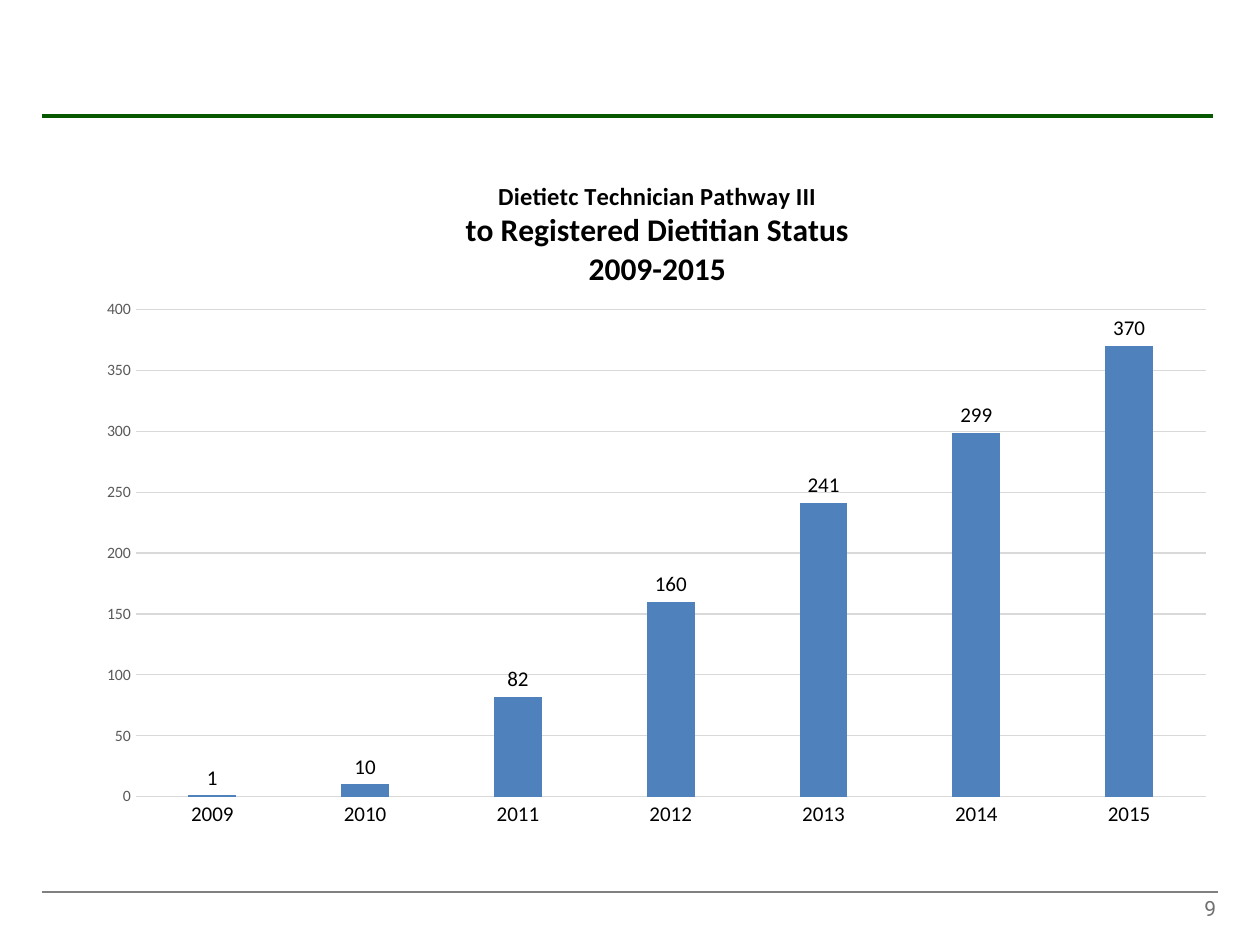
from lxml.etree import SubElement as Sub
from pptx import Presentation
from pptx.chart.data import CategoryChartData as Data
from pptx.dml.color import RGBColor as RGB
from pptx.enum.chart import XL_CHART_TYPE as Kind
from pptx.enum.chart import XL_LABEL_POSITION as Spot
from pptx.enum.chart import XL_TICK_MARK as Tick
from pptx.enum.shapes import MSO_CONNECTOR as Link
from pptx.enum.text import MSO_ANCHOR as Anchor
from pptx.enum.text import PP_ALIGN as Align
from pptx.oxml.ns import qn
from pptx.util import Inches, Pt

HUES = {"green": "065901", "rule": "808080", "page": "717171", "black": "000000",
        "axis": "595959", "grid": "D9D9D9", "bar": "4F81BD"}
YEARS = ["2009", "2010", "2011", "2012", "2013", "2014", "2015"]
COUNTS = [1, 10, 82, 160, 241, 299, 370]
TITLE = [("Dietietc Technician Pathway III", 14),
         ("to Registered Dietitian Status", 18),
         ("2009-2015", 18)]


def hue(name):
    return RGB.from_string(HUES[name])


def style(font, size, color, face="Calibri", bold=False):
    font.name, font.size, font.bold = face, Pt(size), bold
    font.color.rgb = hue(color)


def stroke(line, color, width):
    line.color.rgb = hue(color)
    line.width = Pt(width)


def add_rule(slide, left, top, width, color, weight):
    rule = slide.shapes.add_connector(
        Link.STRAIGHT, Inches(left), Inches(top), Inches(left + width), Inches(top))
    stroke(rule.line, color, weight)
    Sub(rule._element.spPr, qn("a:effectLst"))


def add_page(slide, left, top, width, height):
    box = slide.shapes.add_textbox(
        Inches(left), Inches(top), Inches(width), Inches(height))
    frame = box.text_frame
    frame.word_wrap = True
    frame.vertical_anchor = Anchor.MIDDLE
    para = frame.paragraphs[0]
    para.alignment = Align.RIGHT
    run = para.add_run()
    run.text = "9"
    style(run.font, 12, "page", "Roboto")


def set_layout(part, index, **parts):
    for old in part.findall(qn("c:layout")):
        part.remove(old)
    layout = part.makeelement(qn("c:layout"), {})
    part.insert(index, layout)
    manual = Sub(layout, qn("c:manualLayout"))
    for tag, val in parts.items():
        Sub(manual, qn("c:" + tag)).set("val", str(val))


def add_title(chart):
    frame = chart.chart_title.text_frame
    for i, (text, size) in enumerate(TITLE):
        para = frame.add_paragraph() if i else frame.paragraphs[0]
        run = para.add_run()
        run.text = text
        style(run.font, size, "black", bold=True)
    chart.chart_title.include_in_layout = False
    set_layout(chart.chart_title._element, 1,
               xMode="edge", yMode="edge", x=0.33, y=0.04)


def style_axes(chart):
    cat, val = chart.category_axis, chart.value_axis
    for axis, size, color in ((cat, 12, "black"), (val, 9, "axis")):
        axis.major_tick_mark = axis.minor_tick_mark = Tick.NONE
        style(axis.tick_labels.font, size, color)
    stroke(cat.format.line, "grid", 0.75)
    val.format.line.fill.background()
    val.minimum_scale, val.maximum_scale, val.major_unit = 0, 400, 50
    val.has_major_gridlines = True
    stroke(val.major_gridlines.format.line, "grid", 0.75)


def add_bars(slide, left, top, width, height):
    data = Data()
    data.categories = YEARS
    data.add_series("Series 1", COUNTS)
    chart = slide.shapes.add_chart(
        Kind.COLUMN_CLUSTERED, Inches(left), Inches(top),
        Inches(width), Inches(height), data).chart
    style(chart.font, 10, "black")
    chart.has_legend = False
    add_title(chart)
    style_axes(chart)
    plot = chart.plots[0]
    plot.gap_width = 219
    plot.vary_by_categories = False
    bars = plot.series[0]
    bars.format.fill.solid()
    bars.format.fill.fore_color.rgb = hue("bar")
    labels = bars.data_labels
    labels.show_value = True
    labels.position = Spot.OUTSIDE_END
    style(labels.font, 12, "black")
    area = chart._chartSpace.find(".//" + qn("c:plotArea"))
    set_layout(area, 0, layoutTarget="inner", xMode="edge", yMode="edge",
               x=0.045, y=0.234, w=0.935, h=0.703)


def main():
    deck = Presentation()
    deck.slide_width, deck.slide_height = Inches(10), Inches(7.5)
    slide = deck.slides.add_slide(deck.slide_layouts[6])
    add_rule(slide, 0.33, 7.08, 9.34, "rule", 1)
    add_rule(slide, 0.33, 0.92, 9.3, "green", 2.25)
    add_page(slide, 7.42, 7.08, 2.33, 0.25)
    add_bars(slide, 0.67, 1.17, 9.08, 5.5)
    deck.save("out.pptx")


if __name__ == "__main__":
    main()
